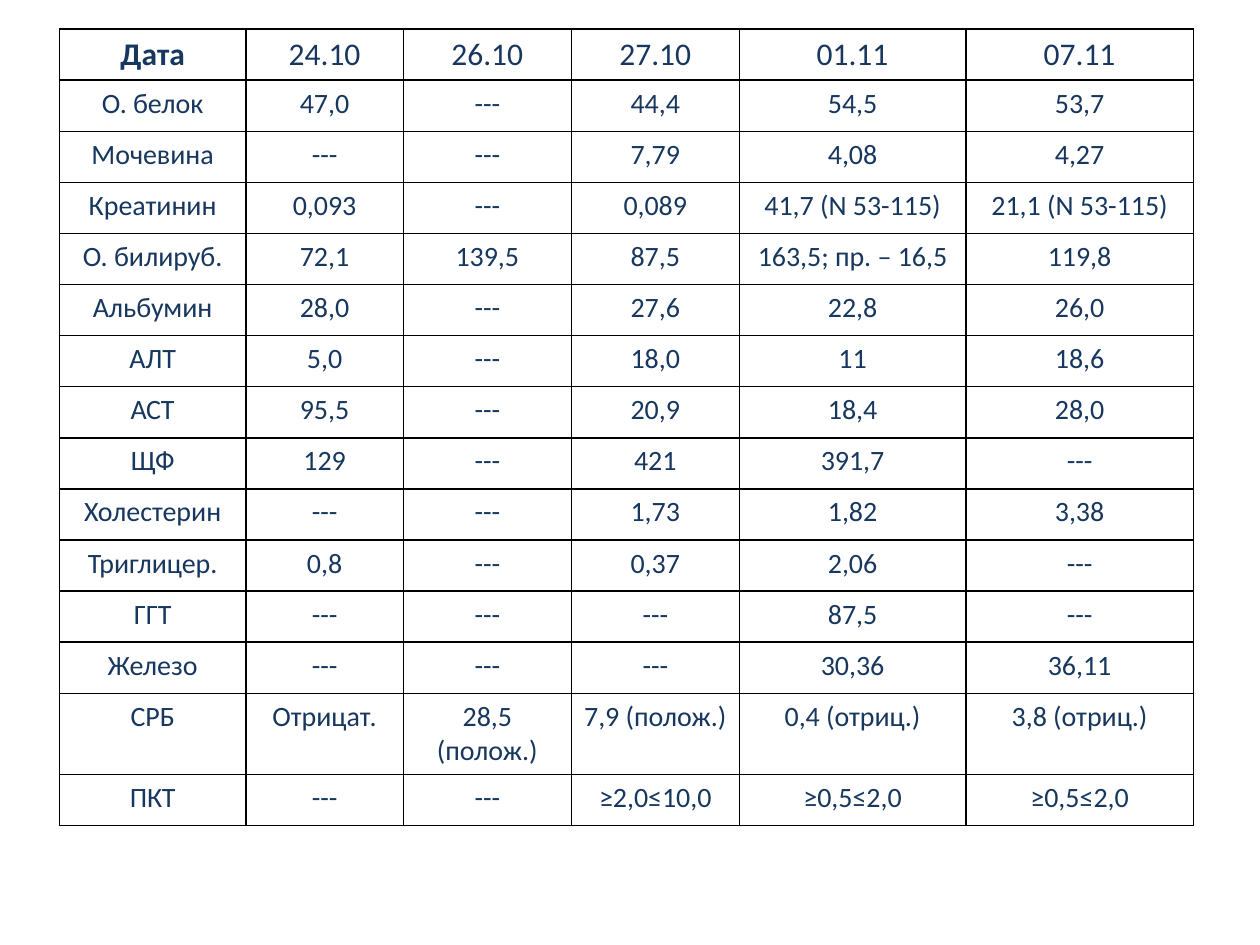
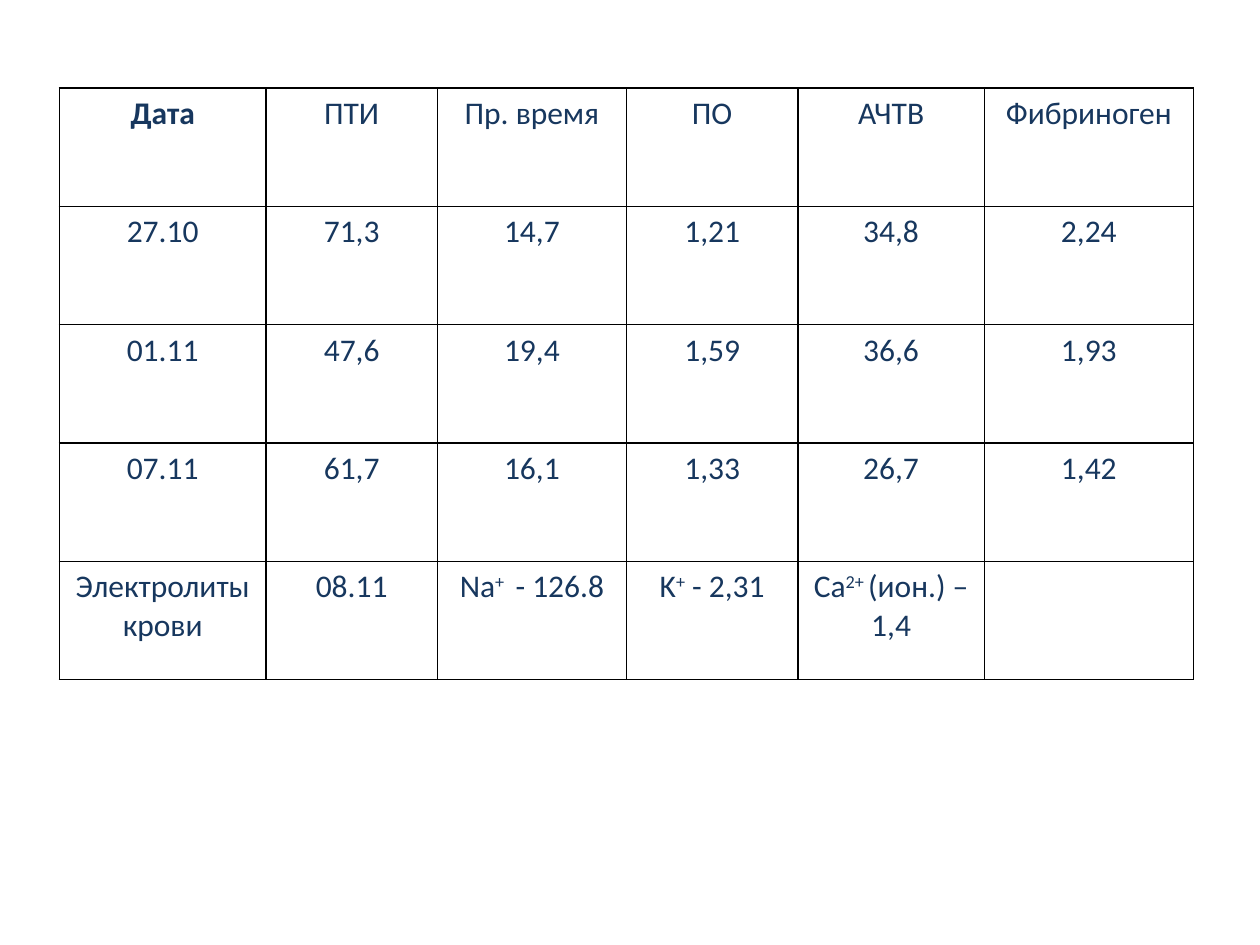
from dataclasses import dataclass

from lxml import etree
from pptx import Presentation
from pptx.dml.color import RGBColor
from pptx.enum.text import PP_ALIGN
from pptx.oxml.ns import qn
from pptx.slide import Slide
from pptx.table import _Cell
from pptx.util import Pt

CENTER = PP_ALIGN.CENTER
NAVY = RGBColor(0x17, 0x37, 0x5E)
BLACK = RGBColor(0x00, 0x00, 0x00)
FONT_NAME = "Calibri"
HEADER_SIZE = 18
TABLE_LEFT = 34
BORDER_WIDTH = 1
BORDER_SIDES = ("a:lnL", "a:lnR", "a:lnT", "a:lnB")
SUPERSCRIPT_MARK = "^"
SUPERSCRIPT_BASELINE = "30000"


@dataclass(frozen=True)
class LabTable:
    top: float
    row_height: float
    body_size: float
    column_widths: tuple[float, ...]
    rows: tuple[tuple[str, ...], ...]


BIOCHEMISTRY = LabTable(
    top=16.6,
    row_height=29.2,
    body_size=16,
    column_widths=(106.5, 90, 96, 96, 129.5, 130),
    rows=(
        ("Дата", "24.10", "26.10", "27.10", "01.11", "07.11"),
        ("О. белок", "47,0", "---", "44,4", "54,5", "53,7"),
        ("Мочевина", "---", "---", "7,79", "4,08", "4,27"),
        ("Креатинин", "0,093", "---", "0,089", "41,7 (N 53-115)", "21,1 (N 53-115)"),
        ("О. билируб.", "72,1", "139,5", "87,5", "163,5; пр. – 16,5", "119,8"),
        ("Альбумин", "28,0", "---", "27,6", "22,8", "26,0"),
        ("АЛТ", "5,0", "---", "18,0", "11", "18,6"),
        ("АСТ", "95,5", "---", "20,9", "18,4", "28,0"),
        ("ЩФ", "129", "---", "421", "391,7", "---"),
        ("Холестерин", "---", "---", "1,73", "1,82", "3,38"),
        ("Триглицер.", "0,8", "---", "0,37", "2,06", "---"),
        ("ГГТ", "---", "---", "---", "87,5", "---"),
        ("Железо", "---", "---", "---", "30,36", "36,11"),
        ("СРБ", "Отрицат.", "28,5 (полож.)", "7,9 (полож.)", "0,4 (отриц.)", "3,8 (отриц.)"),
        ("ПКТ", "---", "---", "≥2,0≤10,0", "≥0,5≤2,0", "≥0,5≤2,0"),
    ),
)

COAGULATION = LabTable(
    top=50.4,
    row_height=67.6,
    body_size=18,
    column_widths=(118, 98, 108, 98, 106.5, 119.5),
    rows=(
        ("Дата", "ПТИ", "Пр. время", "ПО", "АЧТВ", "Фибриноген"),
        ("27.10", "71,3", "14,7", "1,21", "34,8", "2,24"),
        ("01.11", "47,6", "19,4", "1,59", "36,6", "1,93"),
        ("07.11", "61,7", "16,1", "1,33", "26,7", "1,42"),
        ("Электролиты крови", "08.11", "Na^+ ^ - 126.8", "K^+^ - 2,31", "Ca^2+ ^(ион.) – 1,4", ""),
    ),
)


def add_borders(cell: _Cell) -> None:
    properties = cell._tc.get_or_add_tcPr()
    for side in BORDER_SIDES:
        line = etree.SubElement(properties, qn(side), w=str(Pt(BORDER_WIDTH)))
        fill = etree.SubElement(line, qn("a:solidFill"))
        etree.SubElement(fill, qn("a:srgbClr"), val=str(BLACK))


def write_cell(cell: _Cell, text: str, size: float, bold: bool) -> None:
    add_borders(cell)
    cell.fill.background()
    paragraph = cell.text_frame.paragraphs[0]
    paragraph.alignment = CENTER
    if not text:
        return
    for index, part in enumerate(text.split(SUPERSCRIPT_MARK)):
        run = paragraph.add_run()
        run.text = part
        run.font.name = FONT_NAME
        run.font.size = Pt(size)
        run.font.bold = bold
        run.font.color.rgb = NAVY
        if index % 2:
            run._r.get_or_add_rPr().set("baseline", SUPERSCRIPT_BASELINE)


def add_lab_table(slide: Slide, lab_table: LabTable) -> None:
    row_count = len(lab_table.rows)
    table = slide.shapes.add_table(
        row_count,
        len(lab_table.column_widths),
        Pt(TABLE_LEFT),
        Pt(lab_table.top),
        Pt(sum(lab_table.column_widths)),
        Pt(lab_table.row_height * row_count),
    ).table
    table.first_row = False
    table.horz_banding = False
    for column, width in zip(table.columns, lab_table.column_widths):
        column.width = Pt(width)
    for row_index, (row, texts) in enumerate(zip(table.rows, lab_table.rows)):
        row.height = Pt(lab_table.row_height)
        size = lab_table.body_size if row_index else HEADER_SIZE
        for column_index, (cell, text) in enumerate(zip(row.cells, texts)):
            write_cell(cell, text, size, bold=row_index == column_index == 0)


def main() -> None:
    presentation = Presentation()
    presentation.slide_width = Pt(720)
    presentation.slide_height = Pt(540)
    blank_layout = presentation.slide_layouts[6]
    for lab_table in (BIOCHEMISTRY, COAGULATION):
        add_lab_table(presentation.slides.add_slide(blank_layout), lab_table)
    presentation.save("out.pptx")


if __name__ == "__main__":
    main()
